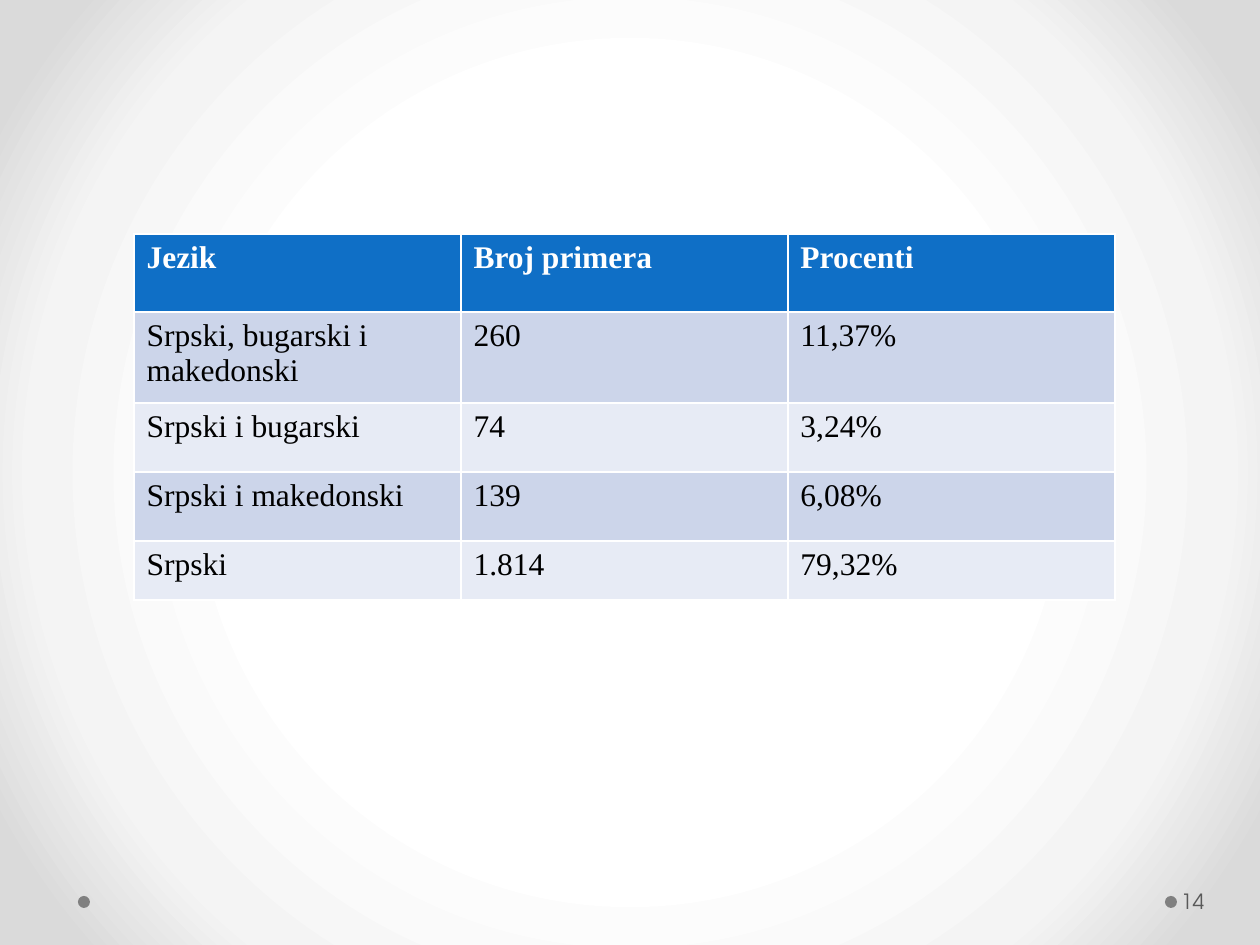
"""Build the slide with the table of examples and percentages by language."""
from dataclasses import dataclass

from pptx import Presentation, util as u
from pptx.dml.color import RGBColor
from pptx.enum import shapes, text
from pptx.oxml import parse_xml
from pptx.oxml.ns import nsdecls


@dataclass(frozen=True)
class Theme:
    header: str = "0F6FC6"
    bands: tuple = ("CCD5EA", "E7EBF5")
    header_text: str = "FFFFFF"
    body_text: str = "000000"
    dot: str = "808080"
    number: str = "595959"
    backdrop: tuple = ((50, "FFFFFF"), (76, "F4F4F4"), (92, "DADADA"))
    table_font: str = "Times New Roman"
    number_font: str = "TeX Gyre Adventor"
    table_size: int = 18
    number_size: int = 12


THEME = Theme()
EMU_PER_PX = 914400 / 126


def px(length):
    return u.Emu(round(length * EMU_PER_PX))


def style(paragraph, name, size, color, bold=False):
    for run in paragraph.runs:
        run.font.name = name
        run.font.size = u.Pt(size)
        run.font.bold = bold
        run.font.color.rgb = RGBColor.from_string(color)


deck = Presentation()
deck.slide_width, deck.slide_height = px(1260), px(945)
slide = deck.slides.add_slide(deck.slide_layouts[6])

stops = "".join(
    f'<a:gs pos="{position * 1000}"><a:srgbClr val="{color}"/></a:gs>'
    for position, color in THEME.backdrop
)
backdrop = parse_xml(
    f'<p:bg {nsdecls("p", "a")}><p:bgPr><a:gradFill rotWithShape="1">'
    f'<a:gsLst>{stops}</a:gsLst><a:path path="circle">'
    '<a:fillToRect l="50000" t="50000" r="50000" b="50000"/></a:path>'
    '</a:gradFill><a:effectLst/></p:bgPr></p:bg>'
)
slide.element.cSld.insert(0, backdrop)

for left in (1165, 78):
    dot = slide.shapes.add_shape(
        shapes.MSO_SHAPE.OVAL, px(left), px(896), px(12), px(12)
    )
    dot.shadow.inherit = False
    dot.fill.solid()
    dot.fill.fore_color.rgb = RGBColor.from_string(THEME.dot)
    dot.line.fill.background()

page = slide.shapes.add_textbox(px(1177), px(876), px(77), px(50)).text_frame
page.word_wrap = True
page.vertical_anchor = text.MSO_ANCHOR.MIDDLE
page.margin_left = px(4)
page.margin_right = px(6)
page.text = "14"
style(page.paragraphs[0], THEME.number_font, THEME.number_size, THEME.number)

languages = [
    ("Jezik", "Broj primera", "Procenti"),
    ("Srpski, bugarski i makedonski", "260", "11,37%"),
    ("Srpski i bugarski", "74", "3,24%"),
    ("Srpski i makedonski", "139", "6,08%"),
    ("Srpski", "1.814", "79,32%"),
]
row_heights = (78, 91, 69, 69, 59)
column_width = 327

table = slide.shapes.add_table(
    len(languages), 3, px(134), px(234), px(3 * column_width), px(sum(row_heights))
).table
for column in table.columns:
    column.width = px(column_width)
for index, (row, values) in enumerate(zip(table.rows, languages)):
    row.height = px(row_heights[index])
    is_header = index == 0
    fill = THEME.header if is_header else THEME.bands[(index - 1) % 2]
    color = THEME.header_text if is_header else THEME.body_text
    for cell, value in zip(row.cells, values):
        cell.fill.solid()
        cell.fill.fore_color.rgb = RGBColor.from_string(fill)
        cell.text_frame.text = value
        style(cell.text_frame.paragraphs[0], THEME.table_font,
              THEME.table_size, color, is_header)

deck.save("out.pptx")
